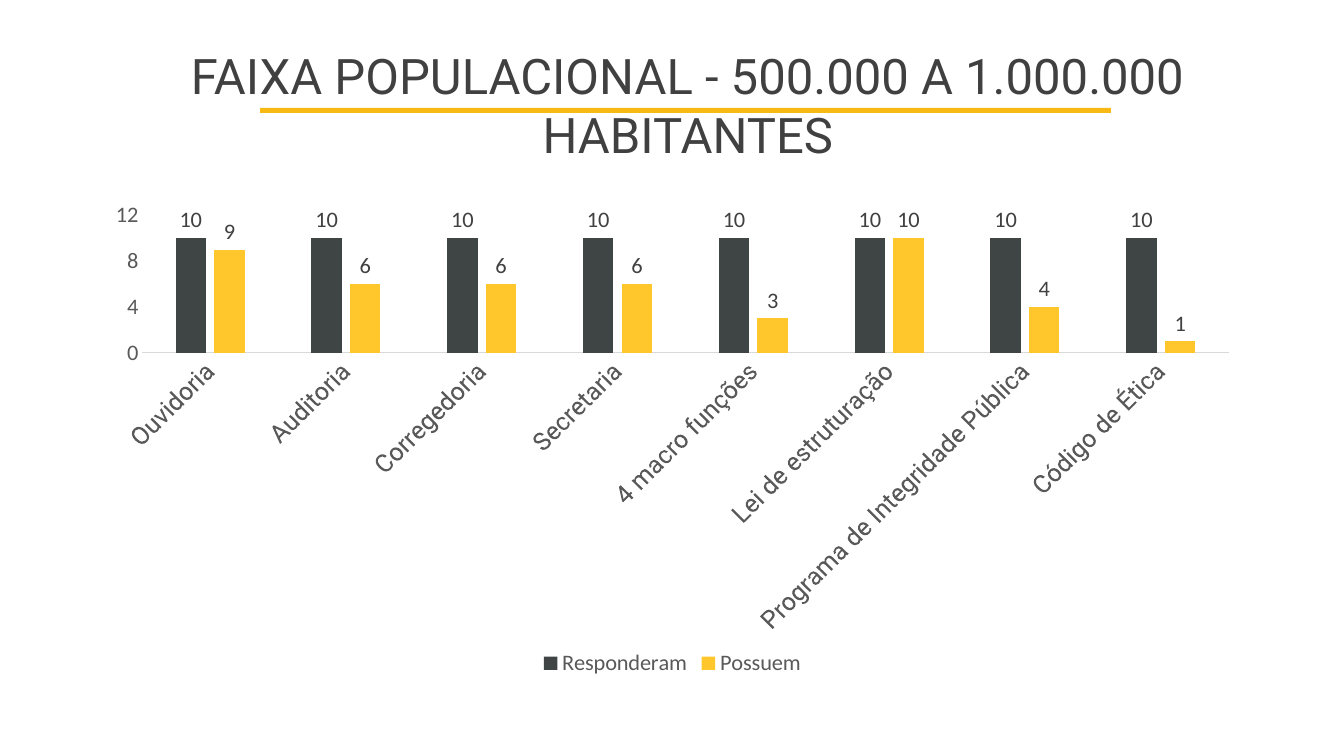
"""Build the slide on integrity bodies in cities of 500,000 to 1,000,000 people."""
from pptx import Presentation
from pptx.chart.data import CategoryChartData
from pptx.dml.color import RGBColor
from pptx.enum.chart import XL_CHART_TYPE, XL_LABEL_POSITION, XL_LEGEND_POSITION, XL_TICK_MARK
from pptx.enum.shapes import MSO_SHAPE
from pptx.enum.text import MSO_ANCHOR, PP_ALIGN
from pptx.util import Pt

COLUMNS = XL_CHART_TYPE.COLUMN_CLUSTERED
OUTSIDE_END = XL_LABEL_POSITION.OUTSIDE_END
LEGEND_BOTTOM = XL_LEGEND_POSITION.BOTTOM
NO_TICK = XL_TICK_MARK.NONE
RECTANGLE = MSO_SHAPE.RECTANGLE
TOP = MSO_ANCHOR.TOP
CENTER = PP_ALIGN.CENTER

TITLE = "FAIXA POPULACIONAL - 500.000 A 1.000.000 HABITANTES"
CATEGORIES = [
    "Ouvidoria",
    "Auditoria",
    "Corregedoria",
    "Secretaria",
    "4 macro funções",
    "Lei de estruturação",
    "Programa de Integridade Pública",
    "Código de Ética",
]
SERIES = [
    ("Responderam", [10] * len(CATEGORIES), "3F4444"),
    ("Possuem", [9, 6, 6, 6, 3, 10, 4, 1], "FFC72C"),
]
DARK, GRAY, PALE, GOLD = "404040", "595959", "D9D9D9", "F9B914"
TITLE_AREA = (42.5, 28.8, 897.8, 49.7)
RULE_AREA = (185.8, 77, 607.7, 3.6)
CHART_AREA = (66.2, 144, 828, 342.7)
LABEL_ROTATION = -45


def color(value):
    return RGBColor.from_string(value)


def points(area):
    return [Pt(length) for length in area]


def style(font, name, size, value):
    font.name, font.size, font.bold = name, Pt(size), False
    font.color.rgb = color(value)


def add_title(page):
    title = page.shapes.title
    title.left, title.top, title.width, title.height = points(TITLE_AREA)
    frame = title.text_frame
    frame.text = TITLE
    frame.word_wrap = True
    frame.vertical_anchor = TOP
    paragraph = frame.paragraphs[0]
    paragraph.alignment = CENTER
    paragraph.line_spacing = 1.0
    style(paragraph.runs[0].font, "Roboto", 35, DARK)


def add_rule(page):
    rule = page.shapes.add_shape(RECTANGLE, *points(RULE_AREA))
    rule.shadow.inherit = False
    rule.fill.solid()
    rule.fill.fore_color.rgb = color(GOLD)
    rule.line.fill.background()


def format_axes(chart):
    category_axis, value_axis = chart.category_axis, chart.value_axis
    for axis, font_name, size in ((category_axis, "Roboto", 18), (value_axis, "Calibri", 16)):
        axis.major_tick_mark = axis.minor_tick_mark = NO_TICK
        axis.has_major_gridlines = False
        style(axis.tick_labels.font, font_name, size, GRAY)
    category_axis.format.line.color.rgb = color(PALE)
    category_axis.format.line.width = Pt(0.75)
    category_axis._element.txPr.bodyPr.set("rot", str(LABEL_ROTATION * 60000))
    value_axis.format.line.fill.background()
    value_axis.minimum_scale, value_axis.maximum_scale = 0, 12
    value_axis.major_unit = 4


def add_chart(page):
    data = CategoryChartData(number_format="General")
    data.categories = CATEGORIES
    for name, values, _ in SERIES:
        data.add_series(name, values)
    chart = page.shapes.add_chart(COLUMNS, *points(CHART_AREA), data).chart
    chart.has_title = False
    style(chart.font, "Calibri", 16, "000000")
    plot = chart.plots[0]
    plot.vary_by_categories = False
    plot.gap_width, plot.overlap = 219, -27
    for series, (_, _, fill) in zip(plot.series, SERIES):
        series.format.fill.solid()
        series.format.fill.fore_color.rgb = color(fill)
        labels = series.data_labels
        labels.show_value = True
        labels.position = OUTSIDE_END
        style(labels.font, "Calibri", 16, DARK)
    chart.has_legend = True
    chart.legend.position = LEGEND_BOTTOM
    chart.legend.include_in_layout = False
    style(chart.legend.font, "Calibri", 16, GRAY)
    format_axes(chart)


def main():
    deck = Presentation()
    deck.slide_width, deck.slide_height = Pt(960), Pt(540)
    page = deck.slides.add_slide(deck.slide_layouts[5])
    add_title(page)
    add_rule(page)
    add_chart(page)
    deck.save("out.pptx")


if __name__ == "__main__":
    main()
